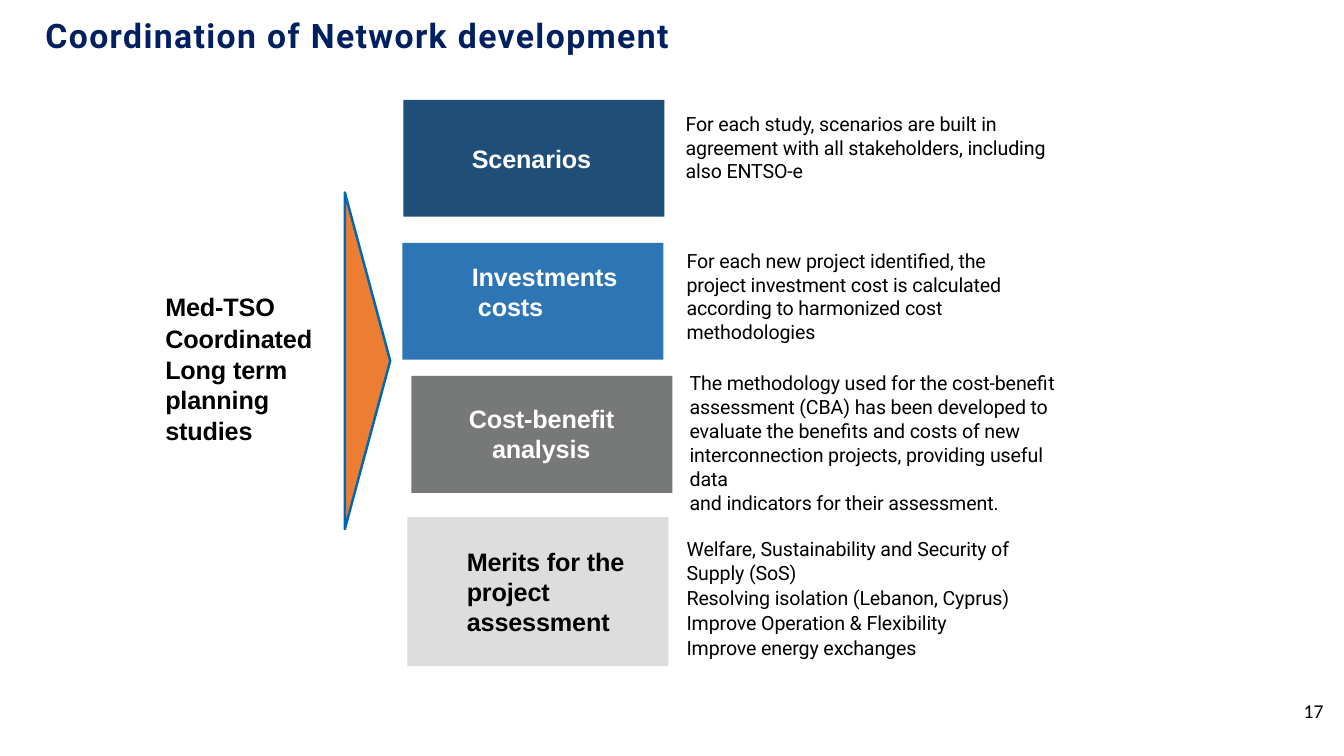
from dataclasses import dataclass

from pptx import Presentation
from pptx.dml.color import RGBColor
from pptx.enum.shapes import MSO_SHAPE
from pptx.enum.text import MSO_ANCHOR, MSO_AUTO_SIZE
from pptx.util import Inches, Pt

RECTANGLE = MSO_SHAPE.RECTANGLE
TOP, MIDDLE = MSO_ANCHOR.TOP, MSO_ANCHOR.MIDDLE
GROW = MSO_AUTO_SIZE.SHAPE_TO_FIT_TEXT


@dataclass(frozen=True)
class Theme:
    black: str = "000000"
    white: str = "FFFFFF"
    title: str = "002060"
    arrow: str = "ED7D31"
    arrow_line: str = "0067B4"
    title_size: float = 24.1
    label_size: float = 18
    body_size: float = 14
    heading_font: str = "Arial"
    body_font: str = "Roboto"
    number_font: str = "Calibri"


THEME = Theme()
TITLE = {"name": THEME.body_font, "size": THEME.title_size, "color": THEME.title, "bold": True}
LABEL = {"name": THEME.heading_font, "size": THEME.label_size, "color": THEME.black, "bold": True}
BODY = {"name": THEME.body_font, "size": THEME.body_size, "color": THEME.black, "bold": False}
NUMBER = BODY | {"name": THEME.number_font}

# Label and detail boxes are offsets from the corner of their block, then sizes.
STAGES = [
    {"block": (4, 0.99, 2.59, 1.16), "fill": "1F4E79", "color": THEME.white,
     "label": "Scenarios", "label_box": (0.67, 0.42, 1.22, 0.33), "indent": (0.01, 0),
     "detail_box": (2.79, 0.11, 3.82, 0.72),
     "details": ["For each study, scenarios are built in agreement with all stakeholders, "
                 "including also ENTSO-e"]},
    {"block": (3.99, 2.41, 2.59, 1.16), "fill": "2E75B6", "color": THEME.white,
     "label": "Investments costs", "label_box": (0.68, 0.17, 1.71, 0.6), "indent": (0.07, -0.06),
     "detail_box": (2.81, 0.05, 3.43, 0.96),
     "details": ["For each new project identified, the project investment cost is calculated "
                 "according to harmonized cost methodologies"]},
    {"block": (4.08, 3.73, 2.59, 1.16), "fill": "777878", "color": THEME.white,
     "label": "Cost-benefit analysis", "label_box": (0.55, 0.26, 1.61, 0.6),
     "indent": (0.25, -0.23), "detail_box": (2.75, -0.06, 3.81, 1.46),
     "details": ["The methodology used for the cost-benefit assessment (CBA) has been developed to",
                 "evaluate the benefits and costs of new interconnection projects, "
                 "providing useful data",
                 "and indicators for their assessment."]},
    {"block": (4.04, 5.13, 2.59, 1.48), "fill": "DDDDDD", "color": THEME.black,
     "label": "Merits for the project assessment", "label_box": (0.59, 0.28, 1.76, 0.91),
     "indent": (0, 0), "detail_box": (2.76, 0.19, 3.77, 1.48),
     "details": ["Welfare, Sustainability and Security of Supply (SoS)",
                 "Resolving isolation (Lebanon, Cyprus)",
                 "Improve Operation & Flexibility",
                 "Improve energy exchanges"]},
]


def paint(shape, fill):
    shape.shadow.inherit = False
    shape.fill.solid()
    shape.fill.fore_color.rgb = RGBColor.from_string(fill)
    shape.line.fill.background()


def add_text(page, box, lines, style, indent=(0.01, 0), spacing=1.0, tracking=-0.1,
             insets=(0, 0.01, 0, 0), anchor=TOP):
    """Add a text box with one paragraph per line; tracking is in points."""
    frame = page.shapes.add_textbox(*map(Inches, box)).text_frame
    left, top, right, bottom = map(Inches, insets)
    settings = {"word_wrap": True, "auto_size": GROW, "vertical_anchor": anchor,
                "margin_left": left, "margin_top": top,
                "margin_right": right, "margin_bottom": bottom}
    for name, value in settings.items():
        setattr(frame, name, value)
    for index, line in enumerate(lines):
        para = frame.add_paragraph() if index else frame.paragraphs[0]
        para.line_spacing = spacing
        if index:
            para.space_before = Pt(1)
        properties = para._p.get_or_add_pPr()
        for name, length in zip(("marL", "indent"), indent):
            properties.set(name, str(Inches(length)))
        span = para.add_run()
        span.text = line
        font_values = {"name": style["name"], "size": Pt(style["size"]), "bold": style["bold"]}
        for name, value in font_values.items():
            setattr(span.font, name, value)
        span.font.color.rgb = RGBColor.from_string(style["color"])
        span._r.get_or_add_rPr().set("spc", str(round(tracking * 100)))


def add_header(page, box):
    add_text(page, box, ["Coordination of Network development"], TITLE, indent=(0, 0),
             spacing=0.8, tracking=1, insets=(0.03,) * 4)


def add_page_number(page, box):
    add_text(page, box, ["17"], NUMBER, indent=(0, 0), tracking=0,
             insets=(0.03,) * 4, anchor=MIDDLE)


def add_studies(page, box):
    """Add the studies heading and the triangle that points to the stages."""
    left, top, width, height = box
    add_text(page, (left, top + 0.97, 1.83, 1.56),
             ["Med-TSO", "Coordinated", "Long term planning studies"], LABEL)
    base, tip = Inches(left + width - 0.45), Inches(left + width)
    outline = page.shapes.build_freeform(base, Inches(top))
    outline.add_line_segments([(tip, Inches(top + height / 2)), (base, Inches(top + height))])
    triangle = outline.convert_to_shape()
    paint(triangle, THEME.arrow)
    triangle.line.color.rgb = RGBColor.from_string(THEME.arrow_line)
    triangle.line.width = Pt(1.75)


def add_stage(page, box, stage):
    left, top = box[:2]

    def inside(part):
        across, down, width, height = part
        return left + across, top + down, width, height

    paint(page.shapes.add_shape(RECTANGLE, *map(Inches, box)), stage["fill"])
    add_text(page, inside(stage["label_box"]), [stage["label"]],
             LABEL | {"color": stage["color"]}, indent=stage["indent"])
    add_text(page, inside(stage["detail_box"]), stage["details"], BODY)


def main():
    deck = Presentation()
    deck.slide_width, deck.slide_height = Inches(13.33), Inches(7.5)
    page = deck.slides.add_slide(deck.slide_layouts[6])
    add_header(page, (0.42, 0.19, 9.71, 0.38))
    add_studies(page, (1.63, 1.91, 2.24, 3.34))
    for stage in STAGES:
        add_stage(page, stage["block"], stage)
    add_page_number(page, (12.9, 6.91, 0.29, 0.29))
    deck.save("out.pptx")


if __name__ == "__main__":
    main()
